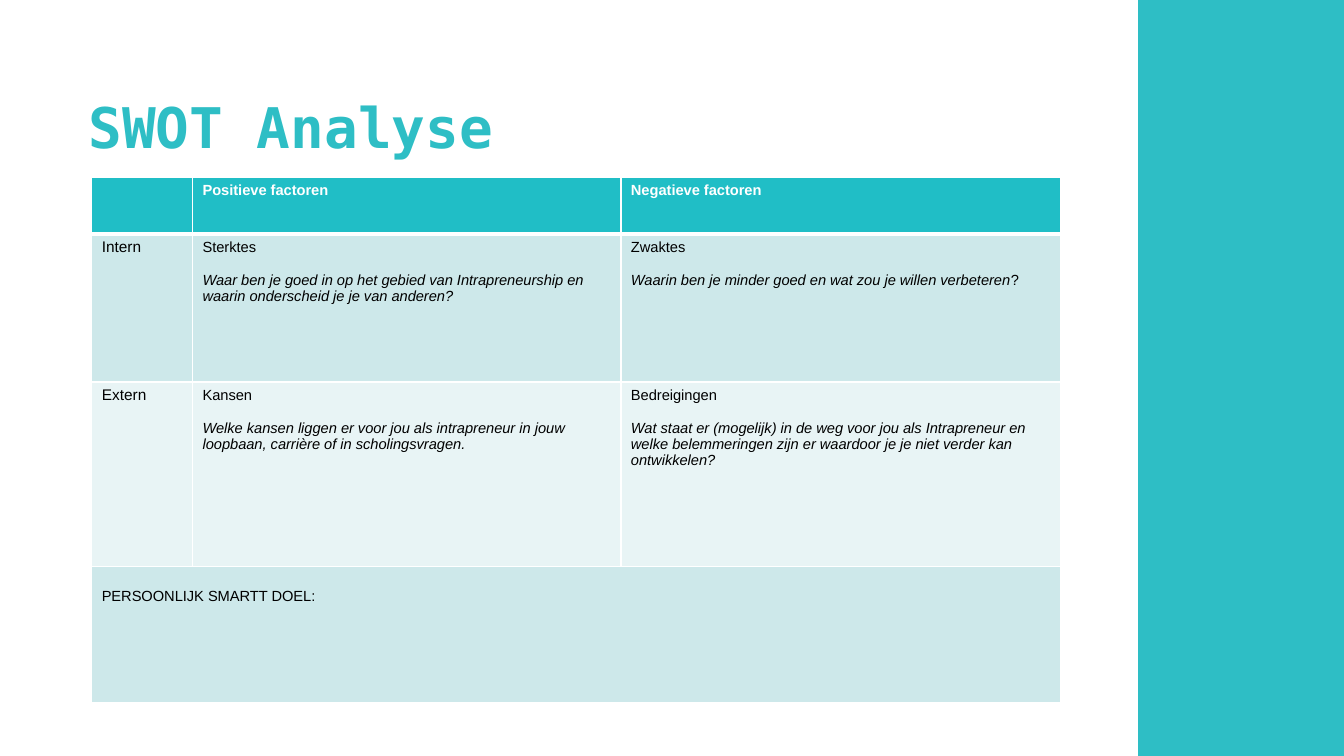
"""Builds a one-page SWOT analysis slide."""
from lxml import etree
from pptx import Presentation
from pptx.dml.color import RGBColor
from pptx.enum.shapes import MSO_SHAPE
from pptx.enum.text import MSO_ANCHOR
from pptx.oxml.ns import qn
from pptx.util import Pt

RECTANGLE = MSO_SHAPE.RECTANGLE
MIDDLE = MSO_ANCHOR.MIDDLE

TEAL, WHITE, BLACK = "2EBEC5", "FFFFFF", "000000"
HEADER_FILL, DARK_BAND, LIGHT_BAND = "20BEC6", "CDE8EA", "E8F4F5"
BODY_SIZE, LABEL_SIZE, LINE_GAP = 10.5, 11, 12

COLUMN_WIDTHS = [72, 306, 314]
ROW_HEIGHTS = [40.32, 105.84, 131.76, 97.2]
HEADINGS = ["Positieve factoren", "Negatieve factoren"]
FACTORS = [
    ("Intern", DARK_BAND, [
        ("Sterktes", [("Waar ben je goed in op het gebied van Intrapreneurship en "
                       "waarin onderscheid je je van anderen?", True)]),
        ("Zwaktes", [("Waarin ben je minder goed en wat zou je willen verbeteren", True),
                     ("?", False)]),
    ]),
    ("Extern", LIGHT_BAND, [
        ("Kansen", [("Welke kansen liggen er voor jou als intrapreneur in jouw "
                     "loopbaan, carrière of in scholingsvragen.", True)]),
        ("Bedreigingen", [("Wat staat er (mogelijk) in de weg voor jou als Intrapreneur en "
                           "welke belemmeringen zijn er waardoor je je niet verder kan "
                           "ontwikkelen?", True)]),
    ]),
]
GOAL = "PERSOONLIJK SMARTT DOEL:"


def rgb(value):
    """Return the colour for a hex string."""
    return RGBColor.from_string(value)


def add_run(paragraph, text, size, color=BLACK, bold=False, italic=False, face="Arial"):
    """Append one formatted run to a paragraph."""
    run = paragraph.add_run()
    run.text = text
    font = run.font
    font.name, font.size = face, Pt(size)
    font.bold, font.italic = bold, italic
    font.color.rgb = rgb(color)


def add_side_bar(slide, left, width, height):
    """Draw the coloured band along the slide edge."""
    bar = slide.shapes.add_shape(RECTANGLE, Pt(left), Pt(0), Pt(width), Pt(height))
    bar.shadow.inherit = False
    bar.fill.solid()
    bar.fill.fore_color.rgb = rgb(TEAL)
    bar.line.fill.background()


def add_title(slide, text):
    """Place the slide title."""
    title = slide.shapes.add_textbox(Pt(56.16), Pt(41.04), Pt(702), Pt(104.4))
    frame = title.text_frame
    frame.word_wrap = True
    frame.vertical_anchor = MIDDLE
    paragraph = frame.paragraphs[0]
    paragraph.line_spacing = 0.9
    add_run(paragraph, text, 40, TEAL, bold=True, face="DejaVu Sans Mono")


def style_cell(cell, fill, top=1, bottom=1):
    """Give a cell white borders and a plain fill."""
    properties = cell._tc.get_or_add_tcPr()
    for side, width in (("L", 1), ("R", 1), ("T", top), ("B", bottom)):
        border = etree.SubElement(properties, qn(f"a:ln{side}"), w=str(Pt(width)))
        paint = etree.SubElement(border, qn("a:solidFill"))
        etree.SubElement(paint, qn("a:srgbClr"), val=WHITE)
    cell.fill.solid()
    cell.fill.fore_color.rgb = rgb(fill)


def fill_factor(cell, name, question):
    """Write a factor name with its question below."""
    frame = cell.text_frame
    add_run(frame.paragraphs[0], name, BODY_SIZE)
    paragraph = frame.add_paragraph()
    paragraph.space_before = Pt(LINE_GAP)
    for text, italic in question:
        add_run(paragraph, text, BODY_SIZE, italic=italic)


def add_swot_table(slide):
    """Build the SWOT grid with the goal row beneath it."""
    table = slide.shapes.add_table(
        len(ROW_HEIGHTS), len(COLUMN_WIDTHS), Pt(65.52), Pt(126.72),
        Pt(sum(COLUMN_WIDTHS)), Pt(sum(ROW_HEIGHTS))).table
    for column, width in zip(table.columns, COLUMN_WIDTHS):
        column.width = Pt(width)
    for row, height in zip(table.rows, ROW_HEIGHTS):
        row.height = Pt(height)

    for cell in table.rows[0].cells:
        style_cell(cell, HEADER_FILL, bottom=3)
    for column, heading in enumerate(HEADINGS, 1):
        add_run(table.cell(0, column).text_frame.paragraphs[0], heading,
                BODY_SIZE, WHITE, bold=True)

    for row, (label, fill, factors) in enumerate(FACTORS, 1):
        for cell in table.rows[row].cells:
            style_cell(cell, fill, top=3 if row == 1 else 1)
        add_run(table.cell(row, 0).text_frame.paragraphs[0], label, LABEL_SIZE)
        for column, (name, question) in enumerate(factors, 1):
            fill_factor(table.cell(row, column), name, question)

    last_row = len(ROW_HEIGHTS) - 1
    for cell in table.rows[last_row].cells:
        style_cell(cell, DARK_BAND)
    goal = table.cell(last_row, 0)
    goal.merge(table.cell(last_row, len(COLUMN_WIDTHS) - 1))
    goal.margin_top = Pt(3.6 + LINE_GAP)
    add_run(goal.text_frame.paragraphs[0], GOAL, BODY_SIZE)


def main():
    """Create and save the slide."""
    deck = Presentation()
    deck.slide_width, deck.slide_height = Pt(960), Pt(540)
    slide = deck.slides.add_slide(deck.slide_layouts[6])
    add_side_bar(slide, 813, 147, 540)
    add_title(slide, "SWOT Analyse")
    add_swot_table(slide)
    deck.save("out.pptx")


if __name__ == "__main__":
    main()
